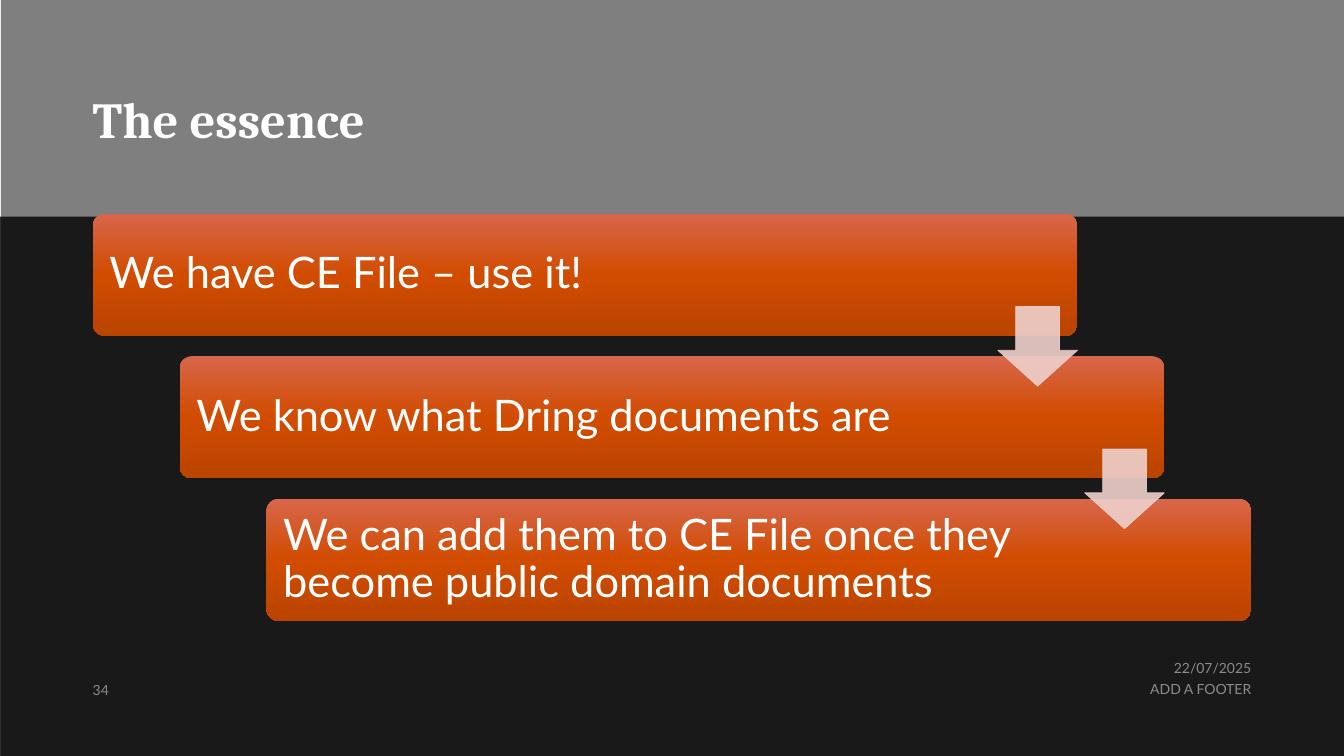
from copy import deepcopy
from pptx import Presentation, util as u
from pptx.dml.color import RGBColor
from pptx.enum import shapes, text
from pptx.oxml.ns import qn
from lxml import etree

W, H = 13.33, 7.5
LEFT, RIGHT = 0.92, 12.41
HUES = {"black": "000000", "white": "FFFFFF", "grey": "D9D9D9", "pink": "EED0CC",
        "top": "D8664B", "mid": "D14C00", "low": "BA4400"}
STEPS = ["We have CE File – use it!", "We know what Dring documents are",
         "We can add them to CE File once they become public domain documents"]
KINDS = shapes.MSO_SHAPE
ALIGN = text.PP_ALIGN
ANCHOR = text.MSO_ANCHOR


def rgb(name):
    """Return the named colour."""
    return RGBColor.from_string(HUES[name])


def apply(item, style):
    """Set each attribute in the style on the item."""
    for key, val in style.items():
        setattr(item, key, val)


def fade(node, share):
    """Make every colour under the node partly opaque."""
    for clr in node.iter(qn("a:srgbClr")):
        etree.SubElement(clr, qn("a:alpha"), val=str(int(share * 100000)))


def put(slide, kind, box):
    """Add a shape without shadow or outline."""
    shape = slide.shapes.add_shape(kind, *map(u.Inches, box))
    shape.shadow.inherit = False
    shape.line.fill.background()
    return shape


def pane(slide, box, share):
    """Draw a see-through black panel."""
    shape = put(slide, KINDS.RECTANGLE, box)
    shape.fill.solid()
    shape.fill.fore_color.rgb = rgb("black")
    fade(shape.fill._xPr, share)


def write(frame, words, size, hue="white", face="Lato", bold=False,
          align=ALIGN.LEFT, gap=0.9, anchor=ANCHOR.TOP, pads=(0, 0, 0, 0)):
    """Fill a text frame with one styled paragraph."""
    sides = ("margin_left", "margin_top", "margin_right", "margin_bottom")
    apply(frame, {"word_wrap": True, "vertical_anchor": anchor,
                  **dict(zip(sides, map(u.Inches, pads)))})
    para = frame.paragraphs[0]
    apply(para, {"alignment": align, "line_spacing": gap})
    run = para.add_run()
    run.text = words
    apply(run.font, {"size": u.Pt(size), "name": face, "bold": bold})
    run.font.color.rgb = rgb(hue)
    return run


def label(slide, box, words, size, share=1, **style):
    """Place a text box, faded when the share is below one."""
    area = slide.shapes.add_textbox(*map(u.Inches, box))
    run = write(area.text_frame, words, size, **style)
    if share < 1:
        fade(run._r, share)


def head(slide):
    """Draw the backdrop and the title."""
    pane(slide, (0.01, 0, W, H), 0.5)
    pane(slide, (0, 2.15, W, H - 2.15), 0.8)
    label(slide, (LEFT, 0.88, 7.5, 0.6), "The essence", 36, face="Cambria",
          bold=True, anchor=ANCHOR.BOTTOM)


def foot(slide):
    """Place the date, the footer and the page number."""
    faint = {"size": 10, "share": 0.6, "hue": "grey"}
    label(slide, (RIGHT - 3, 6.56, 3, 0.16), "22/07/2025", align=ALIGN.RIGHT, **faint)
    label(slide, (RIGHT - 4.5, 6.75, 4.5, 0.21), "ADD A FOOTER",
          align=ALIGN.RIGHT, gap=1.0, **faint)
    label(slide, (LEFT, 6.73, 0.5, 0.2), "34", gap=1.0, anchor=ANCHOR.BOTTOM, **faint)


def step(slide, box, words):
    """Draw one gradient bar with its text."""
    bar = put(slide, KINDS.ROUNDED_RECTANGLE, box)
    bar.adjustments[0] = 0.1
    bar.fill.gradient()
    bar.fill.gradient_angle = 270
    first = bar._element.find(".//" + qn("a:gs"))
    first.addnext(deepcopy(first))
    for stop, hue, pos in zip(bar.fill.gradient_stops, ("top", "mid", "low"), (0, 0.5, 1)):
        stop.color.rgb = rgb(hue)
        stop.position = pos
    write(bar.text_frame, words, 31, anchor=ANCHOR.MIDDLE, pads=(0.13, 0.1, 1.78, 0.1))


def arrow(slide, box):
    """Draw a pale down arrow."""
    shape = put(slide, KINDS.DOWN_ARROW, box)
    shape.adjustments[0], shape.adjustments[1] = 0.55, 0.45
    for fill in (shape.fill, shape.line.fill):
        fill.solid()
        fill.fore_color.rgb = rgb("pink")
    shape.line.width = u.Pt(0.5)
    fade(shape._element.spPr, 0.9)


def stairs(slide, box, steps):
    """Lay out bars as descending stairs joined by arrows."""
    left, top, wide, high = box
    bar, tall, size = wide * 0.85, high * 0.3, 0.79
    last = len(steps) - 1
    right, down = (wide - bar) / last, (high - tall) / last
    spots = [(left + n * right, top + n * down) for n in range(len(steps))]
    for (x, y), words in zip(spots, steps):
        step(slide, (x, y, bar, tall), words)
    for x, y in spots[:-1]:
        arrow(slide, (x + bar - size, y + tall * 0.76, size, size))


def main():
    """Build and save the slide."""
    deck = Presentation()
    apply(deck, {"slide_width": u.Inches(W), "slide_height": u.Inches(H)})
    slide = deck.slides.add_slide(deck.slide_layouts[6])
    head(slide)
    foot(slide)
    stairs(slide, (LEFT, 2.12, RIGHT - LEFT, 4.04), STEPS)
    deck.save("out.pptx")


if __name__ == "__main__":
    main()
